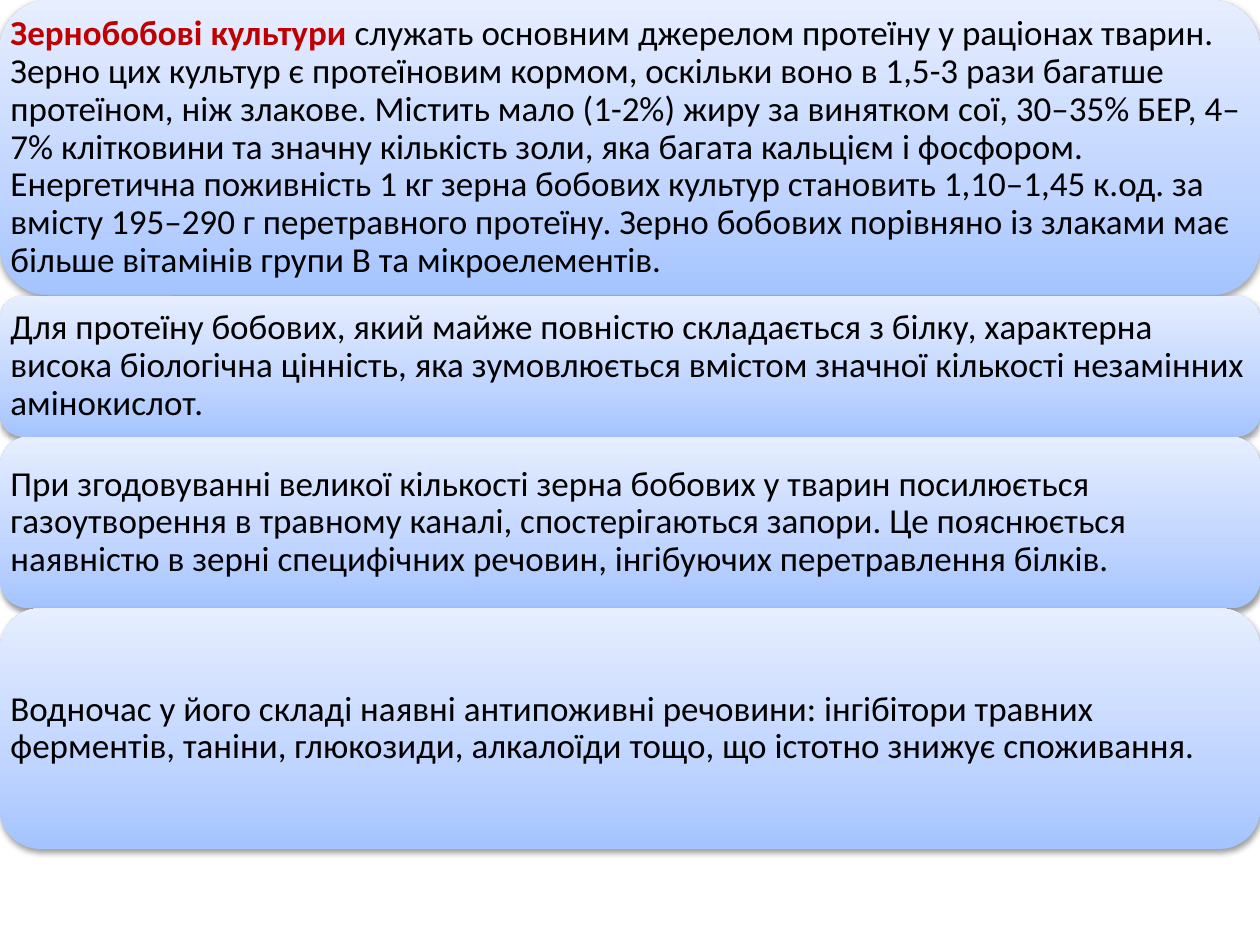
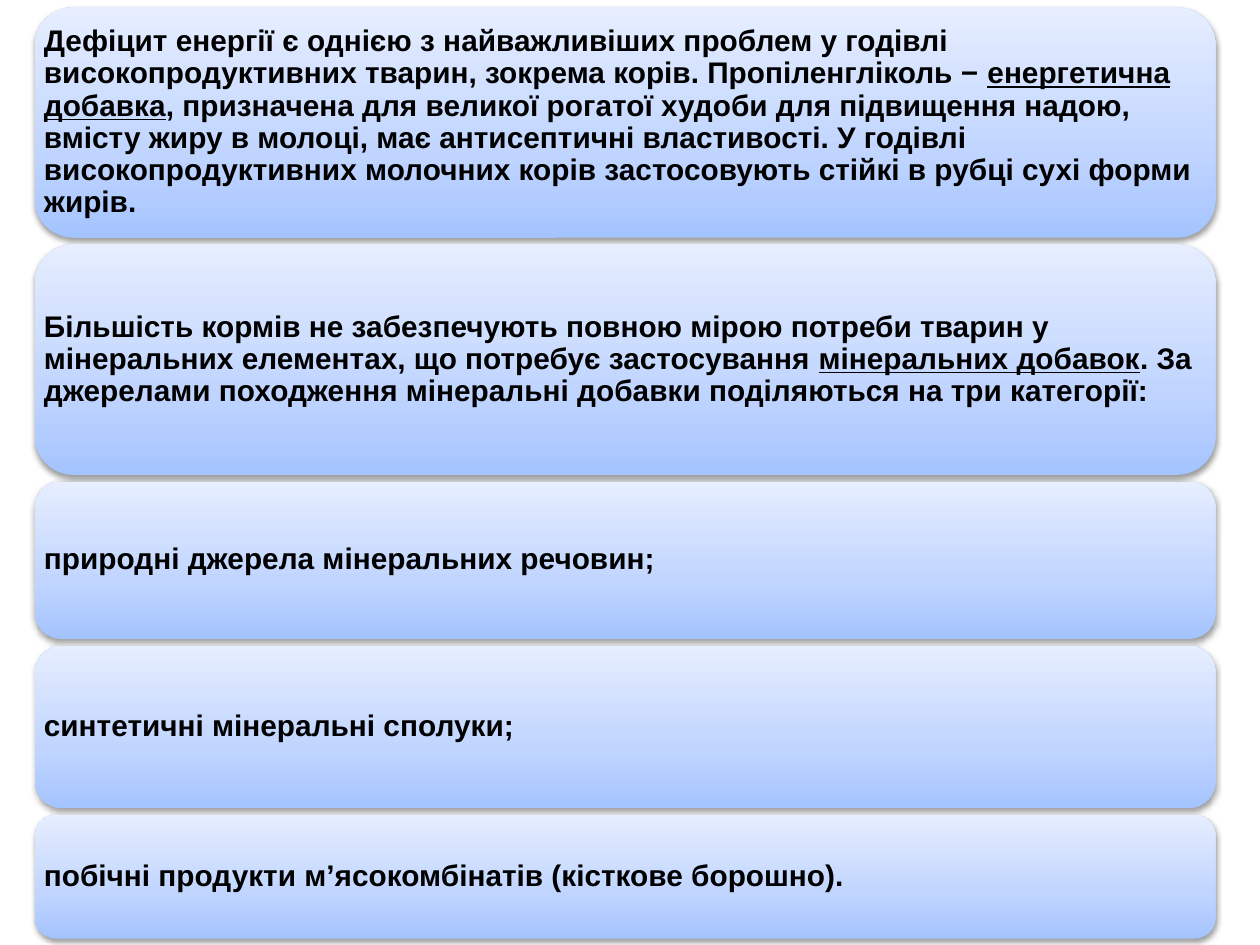
from copy import deepcopy
from dataclasses import dataclass

from pptx import Presentation
from pptx.dml.color import RGBColor
from pptx.enum.shapes import MSO_SHAPE
from pptx.enum.text import MSO_ANCHOR
from pptx.oxml import parse_xml
from pptx.oxml.ns import nsdecls, qn
from pptx.shapes.autoshape import Shape
from pptx.slide import Slide
from pptx.util import Pt

COLORS = {
    "text": "000000",
    "accent": "C00000",
    "panel_bottom": "A4C4FF",
    "panel_middle": "BFD4FF",
    "panel_top": "E6EEFF",
    "shadow": "000000",
}
PANEL_STOPS = ((0, "panel_bottom"), (0.35, "panel_middle"), (1, "panel_top"))
SHADOW_XML = (
    f'<a:effectLst {nsdecls("a")}>'
    f'<a:outerShdw blurRad="{Pt(3.15)}" dist="{Pt(1.6)}" dir="5400000" rotWithShape="0">'
    f'<a:srgbClr val="{COLORS["shadow"]}"><a:alpha val="38000"/></a:srgbClr>'
    "</a:outerShdw></a:effectLst>"
)


@dataclass(frozen=True)
class Span:
    text: str
    color: str = "text"
    bold: bool = False
    underline: bool = False


@dataclass(frozen=True)
class Panel:
    height: float
    spans: tuple[Span, ...]


@dataclass(frozen=True)
class Stack:
    """Panels one below the other, with sizes in points."""

    left: float
    top: float
    width: float
    gap: float
    inset: float
    font: str
    size: float
    panels: tuple[Panel, ...]


LEGUMES = Stack(
    left=0, top=0, width=720, gap=0, inset=6, font="Calibri", size=20,
    panels=(
        Panel(168.9, (
            Span("Зернобобові культури ", color="accent", bold=True),
            Span(
                "служать основним джерелом протеїну у раціонах тварин. Зерно цих культур "
                "є протеїновим кормом, оскільки воно в 1,5-3 рази багатше протеїном, ніж "
                "злакове. Містить мало (1-2%) жиру за винятком сої, 30–35% БЕР, 4–7% "
                "клітковини та значну кількість золи, яка багата кальцієм і фосфором. "
                "Енергетична поживність 1 кг зерна бобових культур становить 1,10–1,45 "
                "к.од. за вмісту 195–290 г перетравного протеїну. Зерно бобових порівняно "
                "із злаками має більше вітамінів групи В та мікроелементів."
            ),
        )),
        Panel(80.8, (Span(
            "Для протеїну бобових, який майже повністю складається з білку, характерна "
            "висока біологічна цінність, яка зумовлюється вмістом значної кількості "
            "незамінних амінокислот."
        ),)),
        Panel(97.9, (Span(
            "При згодовуванні великої кількості зерна бобових у тварин посилюється "
            "газоутворення в травному каналі, спостерігаються запори. Це пояснюється "
            "наявністю в зерні специфічних речовин, інгібуючих перетравлення білків."
        ),)),
        Panel(137.5, (Span(
            "Водночас у його складі наявні антипоживні речовини: інгібітори травних "
            "ферментів, таніни, глюкозиди, алкалоїди тощо, що істотно знижує споживання."
        ),)),
    ),
)

ADDITIVES = Stack(
    left=20, top=4.2, width=674.6, gap=3.8, inset=5.1, font="Arial", size=17,
    panels=(
        Panel(131.7, (
            Span(
                "Дефіцит енергії є однією з найважливіших проблем у годівлі "
                "високопродуктивних тварин, зокрема корів. Пропіленгліколь − ",
                bold=True,
            ),
            Span("енергетична добавка", bold=True, underline=True),
            Span(
                ", призначена для великої рогатої худоби для підвищення надою, вмісту "
                "жиру в молоці, має антисептичні властивості. У годівлі "
                "високопродуктивних молочних корів застосовують стійкі в рубці сухі "
                "форми жирів.",
                bold=True,
            ),
        )),
        Panel(131.7, (
            Span(
                "Більшість кормів не забезпечують повною мірою потреби тварин у "
                "мінеральних елементах, що потребує застосування ",
                bold=True,
            ),
            Span("мінеральних добавок", bold=True, underline=True),
            Span(
                ". За джерелами походження мінеральні добавки поділяються на три категорії:",
                bold=True,
            ),
        )),
        Panel(89.9, (Span("природні джерела мінеральних речовин;", bold=True),)),
        Panel(93, (Span("синтетичні мінеральні сполуки;", bold=True),)),
        Panel(70.6, (
            Span("побічні продукти м’ясокомбінатів (кісткове борошно).", bold=True),
        )),
    ),
)


def set_values(target: object, values: dict[str, object]) -> None:
    for name, value in values.items():
        setattr(target, name, value)


def style_panel(shape: Shape) -> None:
    """Give a panel its three-stop gradient, no outline and a soft shadow."""
    shape.line.fill.background()
    shape.fill.gradient()
    shape.fill.gradient_angle = 90
    properties = shape._element.spPr
    stop_list = properties.find(qn("a:gradFill")).find(qn("a:gsLst"))
    stop_list.append(deepcopy(stop_list[0]))
    for stop, (position, color) in zip(shape.fill.gradient_stops, PANEL_STOPS):
        stop.position = position
        stop.color.rgb = RGBColor.from_string(COLORS[color])
    properties.append(parse_xml(SHADOW_XML))


def add_panel(page: Slide, stack: Stack, panel: Panel, top: float) -> None:
    place = [Pt(length) for length in (stack.left, top, stack.width, panel.height)]
    style_panel(page.shapes.add_shape(MSO_SHAPE.ROUNDED_RECTANGLE, *place))

    # A separate text box keeps the margins free of the corner rounding.
    frame = page.shapes.add_textbox(*place).text_frame
    margins = {f"margin_{side}": Pt(stack.inset) for side in ("left", "top", "right", "bottom")}
    set_values(frame, {"word_wrap": True, "vertical_anchor": MSO_ANCHOR.MIDDLE, **margins})
    para = frame.paragraphs[0]
    para.line_spacing = 0.9
    for span in panel.spans:
        run = para.add_run()
        run.text = span.text
        set_values(run.font, {
            "name": stack.font,
            "size": Pt(stack.size),
            "bold": span.bold,
            "underline": span.underline,
        })
        run.font.color.rgb = RGBColor.from_string(COLORS[span.color])


def add_stack(page: Slide, stack: Stack) -> None:
    top = stack.top
    for panel in stack.panels:
        add_panel(page, stack, panel, top)
        top += panel.height + stack.gap


def main() -> None:
    deck = Presentation()
    set_values(deck, {"slide_width": Pt(720), "slide_height": Pt(540)})
    blank_layout = deck.slide_layouts[6]
    for stack in (LEGUMES, ADDITIVES):
        add_stack(deck.slides.add_slide(blank_layout), stack)
    deck.save("out.pptx")


if __name__ == "__main__":
    main()
